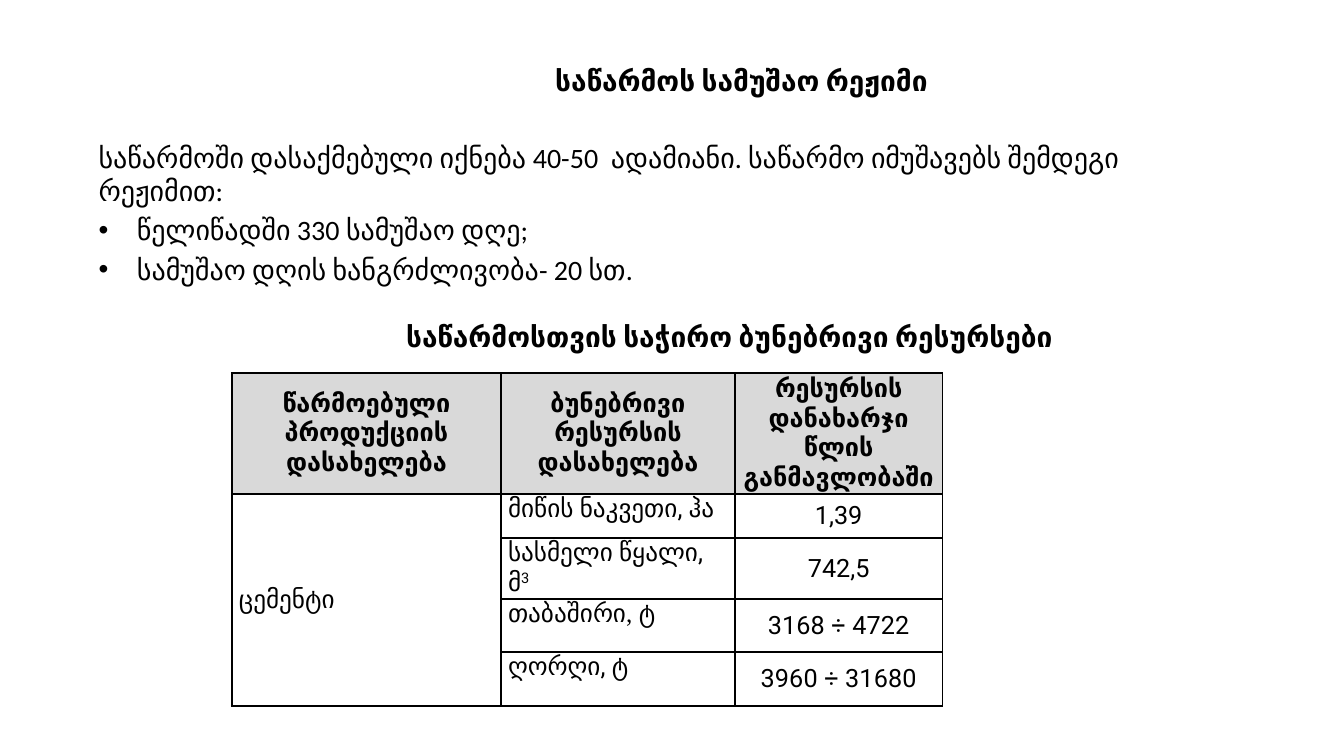
from lxml.etree import SubElement
from pptx import Presentation
from pptx.dml.color import RGBColor
from pptx.enum.text import MSO_ANCHOR, PP_ALIGN
from pptx.oxml.ns import qn
from pptx.util import Inches, Pt

WIDTH, HEIGHT = Inches(13.33), Inches(7.5)
BLACK, WHITE, GREY = "000000", "FFFFFF", "D9D9D9"
COLUMNS = [20.03, 17.4, 15.45]
ROWS = [9.07, 5.87, 6.13, 7.07, 7.07]
HEADERS = [
    "წარმოებული პროდუქციის დასახელება",
    "ბუნებრივი რესურსის დასახელება",
    "რესურსის დანახარჯი წლის განმავლობაში",
]
PRODUCT = "ცემენტი"
RESOURCES = [
    (["მიწის ნაკვეთი, ჰა"], "1,39"),
    (["სასმელი წყალი, მ", "3"], "742,5"),
    (["თაბაშირი", ", ", "ტ"], "3168 ÷ 4722"),
    (["ღორღი, ტ"], "3960 ÷ 31680"),
]
INTRO = "საწარმოში დასაქმებული იქნება 40-50  ადამიანი. საწარმო იმუშავებს შემდეგი რეჟიმით:"
SCHEDULE = ["წელიწადში 330 სამუშაო დღე;", "სამუშაო დღის ხანგრძლივობა- 20 სთ."]


def color(value):
    return RGBColor.from_string(value)


def across(percent):
    return round(WIDTH * percent / 100)


def down(percent):
    return round(HEIGHT * percent / 100)


def area(left, top, width, height):
    return across(left), down(top), across(width), down(height)


def style(span, size, font="Calibri", bold=False):
    span.font.size = Pt(size)
    span.font.name = font
    span.font.bold = bold
    span.font.color.rgb = color(BLACK)
    properties = span._r.get_or_add_rPr()
    for tag in ("a:ea", "a:cs"):
        SubElement(properties, qn(tag)).set("typeface", font)


def add_bullet(para):
    properties = para._p.get_or_add_pPr()
    properties.set("marL", str(Inches(0.38)))
    properties.set("indent", str(Inches(-0.38)))
    SubElement(properties, qn("a:buFont")).set("typeface", "Arial")
    SubElement(properties, qn("a:buChar")).set("char", "•")


def add_title(page, text, place):
    title = page.shapes.title
    title.left, title.top, title.width, title.height = place
    title.text_frame.text = text
    title.text_frame.vertical_anchor = MSO_ANCHOR.MIDDLE
    para = title.text_frame.paragraphs[0]
    para.alignment = PP_ALIGN.CENTER
    style(para.runs[0], 20, bold=True)


def add_text(page, lines, place, bold=False, gap=0):
    box = page.shapes.add_textbox(*place)
    frame = box.text_frame
    frame.word_wrap = True
    frame.text = "\n".join(lines)
    for index, para in enumerate(frame.paragraphs):
        para.space_before = Pt(gap)
        if index:
            add_bullet(para)
        style(para.runs[0], 20, bold=bold)


def add_borders(cell):
    properties = cell._tc.get_or_add_tcPr()
    for index, side in enumerate(("a:lnL", "a:lnR", "a:lnT", "a:lnB")):
        line = properties.makeelement(qn(side), {"w": str(Pt(1.5))})
        fill = SubElement(line, qn("a:solidFill"))
        SubElement(fill, qn("a:srgbClr")).set("val", BLACK)
        properties.insert(index, line)


def fill_cell(cell, parts, centred=False, middle=True, bold=False):
    cell.margin_left = cell.margin_right = Inches(0.07)
    cell.vertical_anchor = MSO_ANCHOR.MIDDLE if middle else MSO_ANCHOR.TOP
    para = cell.text_frame.paragraphs[0]
    para.alignment = PP_ALIGN.CENTER if centred else PP_ALIGN.LEFT
    for part in parts:
        span = para.add_run()
        span.text = part
        style(span, 18, "Times New Roman" if part == ", " else "Roboto", bold)
        if part == "3":
            span._r.get_or_add_rPr().set("baseline", "30000")
        if "÷" in part:
            span._r.get_or_add_rPr().set("spc", "10")


def add_resource_table(page, place):
    table = page.shapes.add_table(len(ROWS), len(COLUMNS), *place).table
    for column, share in zip(table.columns, COLUMNS):
        column.width = across(share)
    for row, share in zip(table.rows, ROWS):
        row.height = down(share)
    for index, row in enumerate(table.rows):
        for cell in row.cells:
            cell.margin_top = cell.margin_bottom = 0
            cell.fill.solid()
            cell.fill.fore_color.rgb = color(WHITE if index else GREY)
            add_borders(cell)
    for index, header in enumerate(HEADERS):
        fill_cell(table.cell(0, index), [header], centred=True, bold=True)
    table.cell(1, 0).merge(table.cell(len(RESOURCES), 0))
    fill_cell(table.cell(1, 0), [PRODUCT])
    for index, (name, amount) in enumerate(RESOURCES, 1):
        fill_cell(table.cell(index, 1), name, middle=False)
        fill_cell(table.cell(index, 2), [amount], centred=True)


def main():
    deck = Presentation()
    deck.slide_width, deck.slide_height = WIDTH, HEIGHT
    page = deck.slides.add_slide(deck.slide_layouts[5])
    add_title(page, "საწარმოს სამუშაო რეჟიმი", area(15.45, 6.27, 79.44, 8.67))
    add_text(page, [INTRO, *SCHEDULE], area(6.6, 17.87, 85.52, 22.8), gap=4)
    add_text(page, ["საწარმოსთვის საჭირო ბუნებრივი რესურსები"],
             area(29.48, 41.6, 59.11, 5.87), bold=True)
    add_resource_table(page, area(17.25, 49.33, sum(COLUMNS), sum(ROWS)))
    deck.save("out.pptx")


if __name__ == "__main__":
    main()
